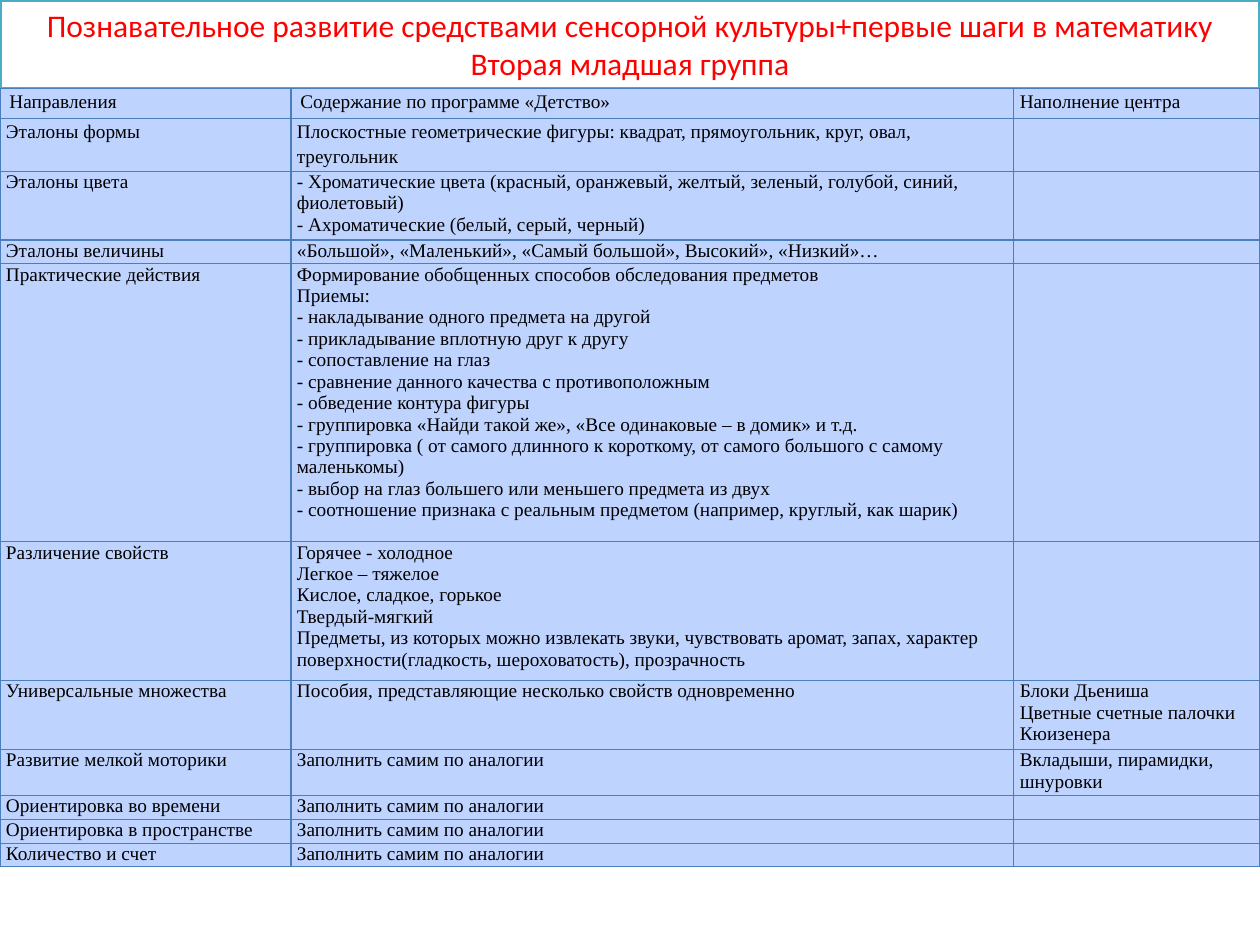
import dataclasses

import lxml.etree
import pptx
import pptx.dml.color
import pptx.enum.text
import pptx.oxml.ns
import pptx.util

Pt = pptx.util.Pt
qn = pptx.oxml.ns.qn


@dataclasses.dataclass(frozen=True)
class Theme:
    title_font: str = "Calibri"
    body_font: str = "Times New Roman"
    title_size: float = 18
    body_size: float = 11
    title_color: str = "FF0000"
    body_color: str = "000000"
    title_fill: str = "FFFFFF"
    title_line: str = "4BACC6"
    cell_fill: str = "BFD3FF"
    cell_border: str = "4B7EBC"


@dataclasses.dataclass(frozen=True)
class Box:
    left: float
    top: float
    width: float
    height: float


THEME = Theme()
SLIDE_WIDTH, SLIDE_HEIGHT = 720, 540
TITLE_BOX = Box(0, 0, SLIDE_WIDTH, 51)
TABLE_BOX = Box(0, 50.4, SLIDE_WIDTH, 444)

TITLE_LINES = [
    "Познавательное развитие средствами сенсорной культуры+первые шаги в математику",
    "Вторая младшая группа",
]
COLUMN_WIDTHS = [166.3, 413.1, 140.6]
SPACED_ROWS = 2
BY_ANALOGY = "Заполнить самим по аналогии"

# Each row: height, then the paragraphs of its three cells
ROWS = [
    (17.1, ["Направления"], ["Содержание по программе «Детство»"], ["Наполнение центра"]),
    (30.3, ["Эталоны формы"],
     ["Плоскостные геометрические фигуры: квадрат, прямоугольник, круг, овал, треугольник"], []),
    (39.4, ["Эталоны цвета"],
     ["- Хроматические цвета (красный, оранжевый, желтый, зеленый, голубой, синий, фиолетовый)",
      "- Ахроматические (белый, серый, черный)"], []),
    (13.4, ["Эталоны величины"],
     ["«Большой», «Маленький», «Самый большой», Высокий», «Низкий»…"], []),
    (158.9, ["Практические действия"],
     ["Формирование обобщенных способов обследования предметов",
      "Приемы:",
      "- накладывание одного предмета на другой",
      "- прикладывание вплотную друг к другу",
      "- сопоставление на глаз",
      "- сравнение данного качества с противоположным",
      "- обведение контура фигуры",
      "- группировка «Найди такой же», «Все одинаковые – в домик» и т.д.",
      "- группировка ( от самого длинного к короткому, от самого большого с самому маленькомы)",
      "- выбор на глаз большего или меньшего предмета из двух",
      "- соотношение признака с реальным предметом (например, круглый, как шарик)"], []),
    (79.3, ["Различение свойств"],
     ["Горячее - холодное",
      "Легкое – тяжелое",
      "Кислое, сладкое, горькое",
      "Твердый-мягкий",
      "Предметы, из которых можно извлекать звуки, чувствовать аромат, запах, характер "
      "поверхности(гладкость, шероховатость), прозрачность"], []),
    (39.4, ["Универсальные множества"],
     ["Пособия, представляющие несколько свойств одновременно"],
     ["Блоки Дьениша", "Цветные счетные палочки Кюизенера"]),
    (26.3, ["Развитие мелкой моторики"], [BY_ANALOGY], ["Вкладыши, пирамидки, шнуровки"]),
    (13.4, ["Ориентировка во времени"], [BY_ANALOGY], []),
    (13.4, ["Ориентировка в пространстве"], [BY_ANALOGY], []),
    (13.4, ["Количество и счет"], [BY_ANALOGY], []),
]


def rgb(value):
    return pptx.dml.color.RGBColor.from_string(value)


def write_paragraphs(text_frame, lines, font, size, color, alignment, spacing=1.0):
    for index, line in enumerate(lines):
        paragraph = text_frame.paragraphs[0] if index == 0 else text_frame.add_paragraph()
        paragraph.alignment = alignment
        paragraph.line_spacing = spacing
        paragraph.space_before = Pt(0)
        run = paragraph.add_run()
        run.text = line
        run.font.name = font
        run.font.size = Pt(size)
        run.font.color.rgb = rgb(color)


def add_title(slide, box):
    shape = slide.shapes.title
    shape.left, shape.top = Pt(box.left), Pt(box.top)
    shape.width, shape.height = Pt(box.width), Pt(box.height)
    shape.fill.solid()
    shape.fill.fore_color.rgb = rgb(THEME.title_fill)
    shape.line.color.rgb = rgb(THEME.title_line)
    shape.line.width = Pt(2)
    text_frame = shape.text_frame
    text_frame.word_wrap = True
    text_frame.auto_size = pptx.enum.text.MSO_AUTO_SIZE.NONE
    text_frame.vertical_anchor = pptx.enum.text.MSO_ANCHOR.TOP
    write_paragraphs(text_frame, TITLE_LINES, THEME.title_font, THEME.title_size,
                     THEME.title_color, pptx.enum.text.PP_ALIGN.CENTER)


def set_borders(cell):
    properties = cell._tc.get_or_add_tcPr()
    for side in ("a:lnL", "a:lnR", "a:lnT", "a:lnB"):
        line = lxml.etree.SubElement(properties, qn(side), w=str(Pt(0.75)))
        fill = lxml.etree.SubElement(line, qn("a:solidFill"))
        lxml.etree.SubElement(fill, qn("a:srgbClr"), val=THEME.cell_border)


def format_cell(cell, lines, inset, spacing):
    cell.margin_left = cell.margin_right = Pt(inset)
    cell.margin_top = cell.margin_bottom = Pt(0)
    set_borders(cell)
    cell.fill.solid()
    cell.fill.fore_color.rgb = rgb(THEME.cell_fill)
    write_paragraphs(cell.text_frame, lines, THEME.body_font, THEME.body_size,
                     THEME.body_color, pptx.enum.text.PP_ALIGN.LEFT, spacing)
    if not lines:
        # Keep an empty cell from stretching its row
        lxml.etree.SubElement(cell.text_frame.paragraphs[0]._p, qn("a:endParaRPr"),
                              sz=str(int(THEME.body_size * 100)))


def add_programme_table(slide, box):
    table = slide.shapes.add_table(len(ROWS), len(COLUMN_WIDTHS), Pt(box.left), Pt(box.top),
                                   Pt(box.width), Pt(box.height)).table
    table.first_row = False
    table.horz_banding = False
    for column, width in zip(table.columns, COLUMN_WIDTHS):
        column.width = Pt(width)
    for row_index, (height, *cells) in enumerate(ROWS):
        table.rows[row_index].height = Pt(height)
        spacing = 1.15 if row_index < SPACED_ROWS else 1.0
        for column_index, lines in enumerate(cells):
            inset = 5.4 if row_index == 0 and column_index < 2 else 3.4
            format_cell(table.cell(row_index, column_index), lines, inset, spacing)


def main():
    presentation = pptx.Presentation()
    presentation.slide_width = Pt(SLIDE_WIDTH)
    presentation.slide_height = Pt(SLIDE_HEIGHT)
    title_only = presentation.slide_layouts.get_by_name("Title Only")
    slide = presentation.slides.add_slide(title_only)
    add_title(slide, TITLE_BOX)
    add_programme_table(slide, TABLE_BOX)
    presentation.save("out.pptx")


if __name__ == "__main__":
    main()
